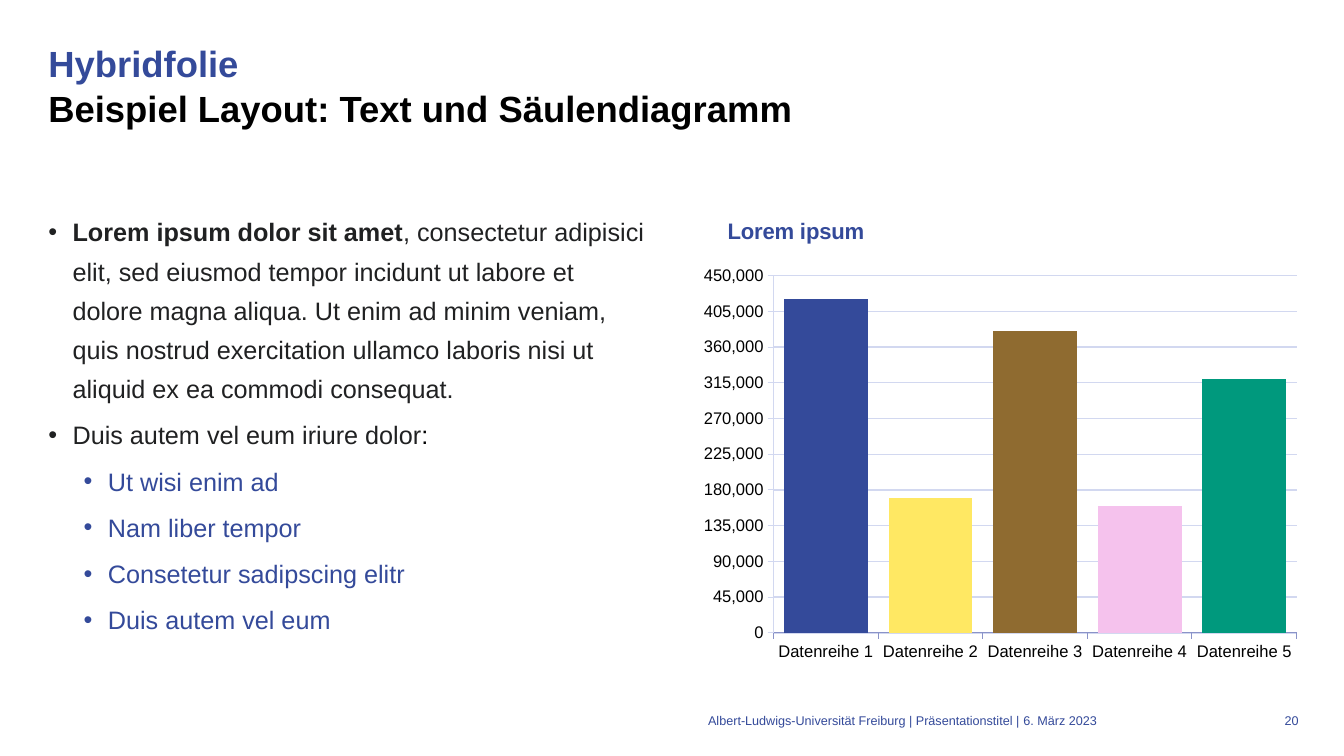
from lxml.etree import SubElement
from pptx import Presentation
from pptx.chart.data import CategoryChartData
from pptx.dml.color import RGBColor
from pptx.enum.chart import XL_CHART_TYPE, XL_TICK_MARK
from pptx.enum.text import MSO_ANCHOR, MSO_AUTO_SIZE, PP_ALIGN
from pptx.oxml.ns import qn
from pptx.util import Inches, Pt

COLORS = {
    "blue": "344A9A", "black": "000000", "text": "202122", "grid": "D2D8F0",
    "axis": "8A93C8", "series": "A2ADEB", "yellow": "FFE863",
    "brown": "8F6B30", "pink": "F5C2ED", "green": "00997D",
}
COLUMNS = [
    ("Datenreihe 1", 420000, "blue"),
    ("Datenreihe 2", 170000, "yellow"),
    ("Datenreihe 3", 380000, "brown"),
    ("Datenreihe 4", 160000, "pink"),
    ("Datenreihe 5", 320000, "green"),
]
INTRO = (
    ", consectetur adipisici elit, sed eiusmod tempor incidunt ut labore et "
    "dolore magna aliqua. Ut enim ad minim veniam, quis nostrud exercitation "
    "ullamco laboris nisi ut aliquid ex ea commodi consequat."
)
SUBPOINTS = ["Ut wisi enim ad", "Nam liber tempor",
             "Consetetur sadipscing elitr", "Duis autem vel eum"]
FOOTER = [
    ("Albert-Ludwigs-Universität Freiburg | Präsentationstitel |",
     3.26, 6.85, PP_ALIGN.RIGHT, 0),
    ("6. März 2023", 10.11, 1.57, PP_ALIGN.LEFT, 0.04),
    ("20", 12.49, 0.39, PP_ALIGN.RIGHT, 0),
]


def rgb(name):
    """Return the named colour."""
    return RGBColor.from_string(COLORS[name])


def style_font(font, size, color, bold=False):
    """Set face, size, colour and weight of a font."""
    font.name = "Arial"
    font.size = Pt(size)
    font.bold = bold
    font.color.rgb = rgb(color)


def add_text(paragraph, text, *, size=18, color="text", bold=False):
    """Append a formatted run to a paragraph."""
    run = paragraph.add_run()
    run.text = text
    style_font(run.font, size, color, bold)


def prepare_frame(frame, left_inset=0):
    """Give a text frame wrapping, top anchor and tight insets."""
    frame.word_wrap = True
    frame.auto_size = MSO_AUTO_SIZE.NONE
    frame.vertical_anchor = MSO_ANCHOR.TOP
    frame.margin_left = Inches(left_inset)
    frame.margin_top = frame.margin_right = frame.margin_bottom = 0
    return frame


def add_box(slide, left, top, width, height, left_inset=0):
    """Add a text box and return its frame."""
    box = slide.shapes.add_textbox(
        Inches(left), Inches(top), Inches(width), Inches(height))
    return prepare_frame(box.text_frame, left_inset)


def fill_title(slide):
    """Place and fill the two-line title."""
    title = slide.shapes.title
    title.left, title.top = Inches(0.48), Inches(0.4)
    title.width, title.height = Inches(12.4), Inches(1.45)
    heading = prepare_frame(title.text_frame).paragraphs[0]
    heading.alignment = PP_ALIGN.LEFT
    heading.line_spacing = Pt(32)
    add_text(heading, "Hybridfolie", size=26, color="blue", bold=True)
    heading.add_line_break()
    add_text(heading, "Beispiel Layout: Text und Säulendiagramm",
             size=26, color="black", bold=True)


def add_bullet(frame, runs, level=0):
    """Add a bulleted paragraph built from text and format pairs."""
    first = not frame.paragraphs[0].runs
    bullet = frame.paragraphs[0] if first else frame.add_paragraph()
    bullet.level = level
    bullet.line_spacing = Pt(28)
    bullet.space_before = Pt(0 if first else 5)
    properties = bullet._p.get_or_add_pPr()
    properties.set("marL", str(Inches(0.59 if level else 0.24)))
    properties.set("indent", str(Inches(-0.24)))
    SubElement(properties, qn("a:buFont")).set("typeface", "Arial")
    SubElement(properties, qn("a:buChar")).set("char", "•")
    for text, style in runs:
        add_text(bullet, text, **style)


def add_body(slide):
    """Add the bulleted text on the left."""
    body = add_box(slide, 0.48, 2.06, 5.91, 4.72)
    add_bullet(body, [("Lorem ipsum dolor sit amet", {"bold": True}),
                      (INTRO, {})])
    add_bullet(body, [("Duis autem vel eum iriure dolor", {}),
                      (":", {"color": "black"})])
    for subpoint in SUBPOINTS:
        add_bullet(body, [(subpoint, {"color": "blue"})], level=1)


def set_layout(parent, index, **settings):
    """Replace the manual layout of a chart part."""
    for old in parent.findall(qn("c:layout")):
        parent.remove(old)
    layout = SubElement(parent, qn("c:layout"))
    manual = SubElement(layout, qn("c:manualLayout"))
    for tag, value in settings.items():
        SubElement(manual, qn(f"c:{tag}")).set("val", str(value))
    parent.insert(index, layout)


def style_axis(axis, line_color):
    """Format labels, ticks and line of an axis."""
    style_font(axis.tick_labels.font, 12, "black")
    axis.major_tick_mark = XL_TICK_MARK.OUTSIDE
    axis.minor_tick_mark = XL_TICK_MARK.NONE
    axis.format.line.color.rgb = rgb(line_color)
    axis.format.line.width = Pt(0.75)


def add_column_chart(slide):
    """Add the column chart on the right."""
    data = CategoryChartData(number_format="#,##0")
    names, values, fills = zip(*COLUMNS)
    data.categories = names
    data.add_series("Series 1", values)
    chart = slide.shapes.add_chart(
        XL_CHART_TYPE.COLUMN_STACKED, Inches(6.98), Inches(2.06),
        Inches(5.91), Inches(4.72), data).chart
    style_font(chart.font, 12, "blue")
    chart.has_legend = False
    chart.has_title = True
    heading = chart.chart_title.text_frame.paragraphs[0]
    add_text(heading, "Lorem ipsum", size=16, color="blue", bold=True)
    set_layout(chart.chart_title._element, 1,
               xMode="edge", yMode="edge", x=0.02, y=0.01)
    set_layout(chart._chartSpace.chart.plotArea, 0, layoutTarget="inner",
               xMode="edge", yMode="edge", x=0.105, y=0.143, w=0.89, h=0.751)

    style_axis(chart.category_axis, "axis")
    scale = chart.value_axis
    style_axis(scale, "grid")
    scale.minimum_scale, scale.maximum_scale = 0, 450000
    scale.major_unit = 45000
    scale.tick_labels.number_format = "#,##0"
    scale.tick_labels.number_format_is_linked = False
    scale.has_major_gridlines = True
    scale.major_gridlines.format.line.color.rgb = rgb("grid")
    scale.major_gridlines.format.line.width = Pt(1)

    plot = chart.plots[0]
    plot.gap_width, plot.overlap = 25, 100
    plot.vary_by_categories = False
    columns = plot.series[0]
    columns.format.fill.solid()
    columns.format.fill.fore_color.rgb = rgb("series")
    for index, color in enumerate(fills):
        column_fill = columns.points[index].format.fill
        column_fill.solid()
        column_fill.fore_color.rgb = rgb(color)


def add_footer(slide):
    """Add footer text, date and slide number."""
    for text, left, width, alignment, inset in FOOTER:
        line = add_box(slide, left, 7.07, width, 0.2, inset).paragraphs[0]
        line.alignment = alignment
        add_text(line, text, size=9, color="blue")


def main():
    """Build and save the slide."""
    deck = Presentation()
    deck.slide_width, deck.slide_height = Inches(13.33), Inches(7.5)
    slide = deck.slides.add_slide(deck.slide_layouts[5])
    fill_title(slide)
    add_footer(slide)
    add_body(slide)
    add_column_chart(slide)
    deck.save("out.pptx")


if __name__ == "__main__":
    main()
